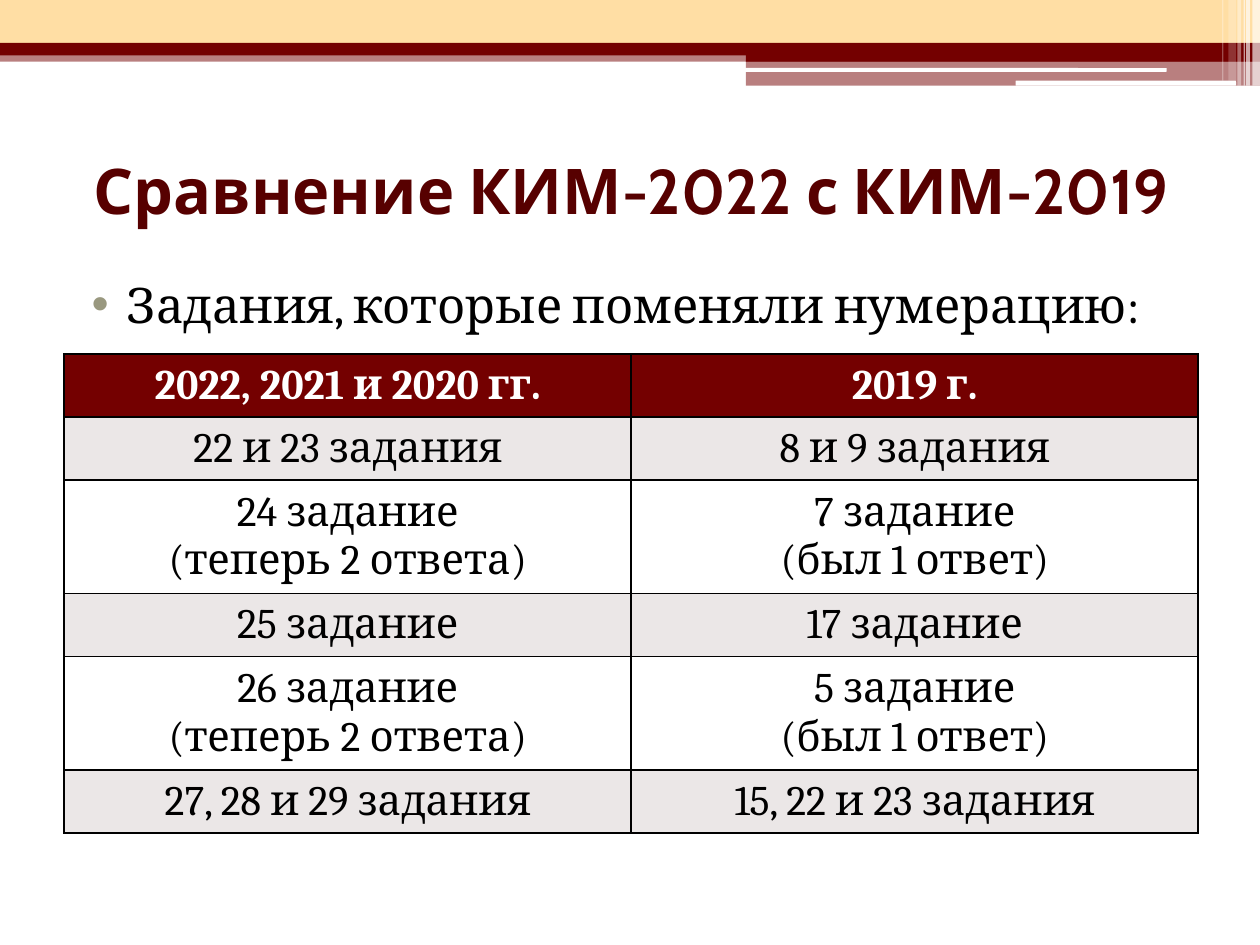
"""Build a slide comparing task numbering in two exam versions."""
from dataclasses import dataclass

from lxml import etree
from pptx import Presentation
from pptx.dml.color import RGBColor
from pptx.enum import shapes, text
from pptx.oxml import ns
from pptx.util import Inches, Pt


@dataclass(frozen=True)
class Theme:
    """Colours, fonts and type sizes."""
    dark: str = "740000"
    sand: str = "FFDEA4"
    white: str = "FFFFFF"
    black: str = "000000"
    title: str = "570000"
    bullet: str = "99987F"
    stripe: str = "EBE7E7"
    head_font: str = "Cabin"
    body_font: str = "Cambria"
    title_size: int = 36
    body_size: int = 28
    table_size: int = 24


T = Theme()
RECT = shapes.MSO_SHAPE.RECTANGLE
ROUND = shapes.MSO_SHAPE.ROUNDED_RECTANGLE

BANDS = [
    (RECT, 0, 0.4, 10, 0.09, T.dark, 50),
    (RECT, 0, 0, 10, 0.34, T.sand, 100),
    (RECT, 0, 0.34, 10, 0.1, T.dark, 100),
    (RECT, 5.92, 0.39, 4.08, 0.1, T.dark, 100),
    (RECT, 5.92, 0.48, 4.08, 0.2, T.dark, 50),
    (ROUND, 5.91, 0.54, 3.35, 0.03, T.white, 100),
    (ROUND, 8.06, 0.64, 1.75, 0.04, T.white, 100),
]
STRIPES = [
    (9.94, 0.06, 0.68, 65),
    (9.89, 0.03, 0.68, 65),
    (9.87, 0.01, 0.68, 60),
    (9.82, 0.03, 0.68, 40),
    (9.75, 0.06, 0.64, 20),
    (9.7, 0.01, 0.64, 30),
]
ROWS = [
    (["2022, 2021 и 2020 гг."], ["2019 г."]),
    (["22 и 23 задания"], ["8 и 9 задания"]),
    (["24 задание", "(теперь 2 ответа)"], ["7 задание", "(был 1 ответ)"]),
    (["25 задание"], ["17 задание"]),
    (["26 задание", "(теперь 2 ответа)"], ["5 задание", "(был 1 ответ)"]),
    (["27, 28 и 29 задания"], ["15, 22 и 23 задания"]),
]


def sub(parent, tag, **attrs):
    """Append an XML child and return it."""
    return etree.SubElement(parent, ns.qn(tag), attrs)


def add_bar(s, kind, x, y, w, h, color, alpha):
    """Add a borderless bar with the given opacity in percent."""
    sp = s.shapes.add_shape(kind, Inches(x), Inches(y), Inches(w), Inches(h))
    sp.shadow.inherit = False
    sp.line.fill.background()
    sp.fill.solid()
    sp.fill.fore_color.rgb = RGBColor.from_string(color)
    if alpha < 100:
        clr = sp.fill._xPr.find(".//" + ns.qn("a:srgbClr"))
        sub(clr, "a:alpha", val=str(alpha * 1000))


def add_run(p, words, font, size, color, bold=False):
    """Add one formatted run to a paragraph."""
    r = p.add_run()
    r.text = words
    r.font.name = font
    r.font.size = Pt(size)
    r.font.bold = bold
    r.font.color.rgb = RGBColor.from_string(color)


def add_box(s, y, h, anchor, align):
    """Add a wrapping text box and return its first paragraph."""
    sp = s.shapes.add_textbox(Inches(0.51), Inches(y), Inches(9), Inches(h))
    tf = sp.text_frame
    tf.word_wrap = True
    tf.vertical_anchor = anchor
    p = tf.paragraphs[0]
    p.alignment = align
    return p


def add_bullet(p, color):
    """Give a paragraph a hanging coloured bullet."""
    pPr = p._p.get_or_add_pPr()
    pPr.set("marL", str(Inches(0.4)))
    pPr.set("indent", str(Inches(-0.28)))
    sub(sub(pPr, "a:buClr"), "a:srgbClr", val=color)
    sub(pPr, "a:buFont", typeface="Arial")
    sub(pPr, "a:buChar", char="•")


def fill_cell(cell, lines, fill, color, bold):
    """Write centred lines in a cell with a fill and thin borders."""
    cell.vertical_anchor = text.MSO_ANCHOR.MIDDLE
    tf = cell.text_frame
    for i, words in enumerate(lines):
        p = tf.add_paragraph() if i else tf.paragraphs[0]
        p.alignment = text.PP_ALIGN.CENTER
        add_run(p, words, T.body_font, T.table_size, color, bold)
    tcPr = cell._tc.get_or_add_tcPr()
    for side in ("a:lnL", "a:lnR", "a:lnT", "a:lnB"):
        ln = sub(tcPr, side, w=str(Pt(1)))
        sub(sub(ln, "a:solidFill"), "a:srgbClr", val=T.black)
    cell.fill.solid()
    cell.fill.fore_color.rgb = RGBColor.from_string(fill)


def add_grid(s, rows):
    """Add the comparison table with a dark header and striped rows."""
    table = s.shapes.add_table(len(rows), 2, Inches(0.51), Inches(2.81),
                               Inches(9), Inches(3.8)).table
    for i, row in enumerate(rows):
        table.rows[i].height = Inches(0.41)
        fill = T.stripe if i % 2 else T.white
        for j, lines in enumerate(row):
            if i == 0:
                fill_cell(table.cell(i, j), lines, T.dark, T.white, True)
            else:
                fill_cell(table.cell(i, j), lines, fill, T.black, False)


def main():
    """Build and save the slide."""
    prs = Presentation()
    prs.slide_width, prs.slide_height = Inches(10), Inches(7.5)
    s = prs.slides.add_slide(prs.slide_layouts[6])
    for band in BANDS:
        add_bar(s, *band)
    for x, w, h, alpha in STRIPES:
        add_bar(s, RECT, x, 0, w, h, T.white, alpha)
    p = add_box(s, 0.92, 1.17, text.MSO_ANCHOR.MIDDLE, text.PP_ALIGN.CENTER)
    add_run(p, "Сравнение КИМ-2022 с КИМ-2019", T.head_font, T.title_size,
            T.title, True)
    p = add_box(s, 2.13, 4.73, text.MSO_ANCHOR.TOP, text.PP_ALIGN.JUSTIFY)
    p.space_before = Pt(3)
    add_bullet(p, T.bullet)
    add_run(p, "Задания, которые поменяли нумерацию:", T.body_font,
            T.body_size, T.black)
    add_grid(s, ROWS)
    prs.save("out.pptx")


if __name__ == "__main__":
    main()
